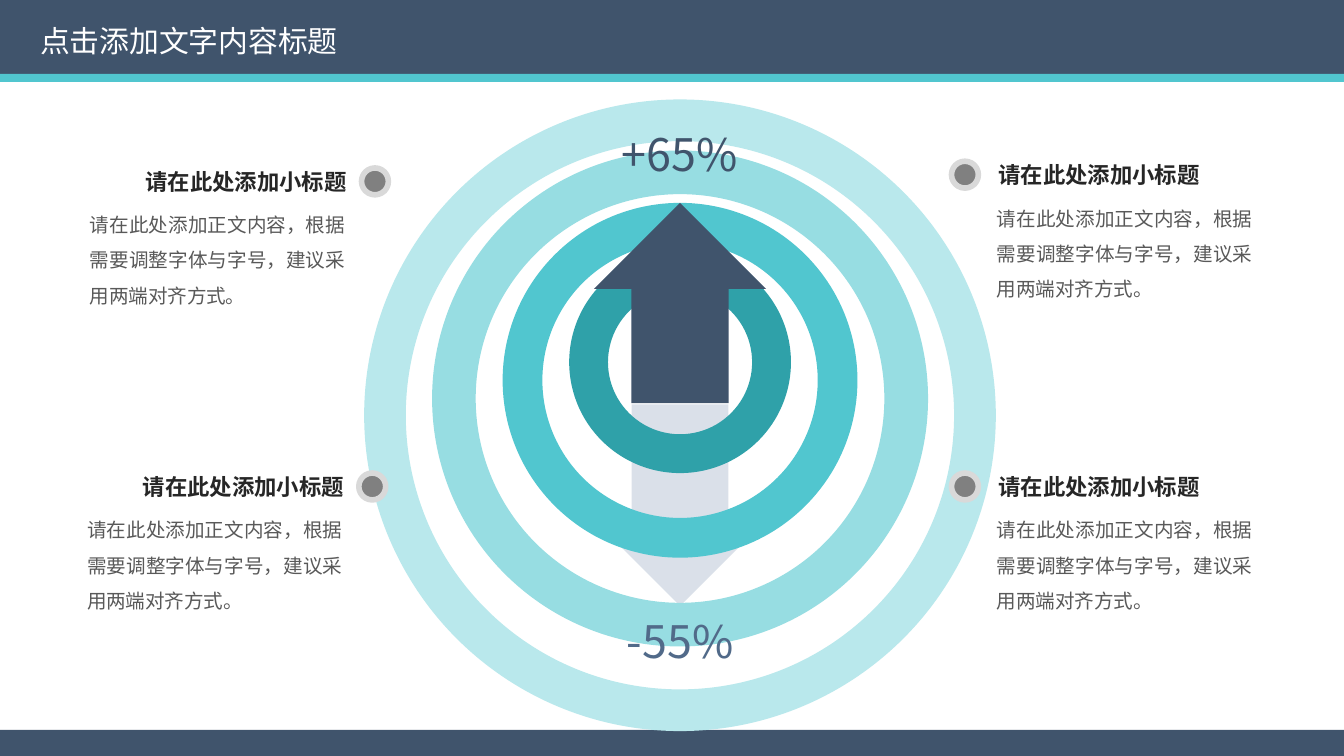
from pptx import Presentation
from pptx.dml.color import RGBColor as RGB
from pptx.enum.shapes import MSO_SHAPE as Kind
from pptx.enum.text import MSO_AUTO_SIZE as Auto, PP_ALIGN as Align
from pptx.oxml.ns import qn
from pptx.util import Inches, Pt
from lxml import etree

NAVY = RGB(0x40, 0x54, 0x6C)
SLATE = RGB(0x51, 0x6A, 0x89)
MIST = RGB(0xB6, 0xC3, 0xD4)
TEAL = RGB(0x51, 0xC6, 0xCF)
DEEP = RGB(0x2F, 0xA1, 0xA9)
SOFT = RGB(0x97, 0xDD, 0xE2)
PALE = RGB(0xB9, 0xE8, 0xEC)
GRAY = RGB(0x80, 0x80, 0x80)
RIM = RGB(0xD9, 0xD9, 0xD9)
INK = RGB(0x26, 0x26, 0x26)
BODY = RGB(0x59, 0x59, 0x59)
WHITE = RGB(0xFF, 0xFF, 0xFF)
FACE = "Noto Sans CJK SC"

HEAD = "请在此处添加小标题"
NOTE = "请在此处添加正文内容，根据需要调整字体与字号，建议采用两端对齐方式。"

deck = Presentation()
deck.slide_width, deck.slide_height = Inches(10), Inches(10 * 9 / 16)
slide = deck.slides.add_slide(deck.slide_layouts[6])


def draw(kind, box, fill, adjust=()):
    """Add a flat shape without outline; box is left, top, width, height."""
    shape = slide.shapes.add_shape(kind, *map(Inches, box))
    shape.shadow.inherit = False
    shape.fill.solid()
    shape.fill.fore_color.rgb = fill
    shape.line.fill.background()
    for i, value in enumerate(adjust):
        shape.adjustments[i] = value
    return shape


def write(text, box, size, color, align=Align.LEFT, wrap=True, bold=False, space=1.0):
    frame = slide.shapes.add_textbox(*map(Inches, box)).text_frame
    frame.word_wrap = wrap
    frame.auto_size = Auto.SHAPE_TO_FIT_TEXT
    para = frame.paragraphs[0]
    para.alignment, para.line_spacing = align, space
    run = para.add_run()
    run.text = text
    look = {"name": FACE, "size": Pt(size), "bold": bold}
    for key, value in look.items():
        setattr(run.font, key, value)
    run.font.color.rgb = color
    etree.SubElement(run.font._element, qn("a:ea")).set("typeface", FACE)


# Header and footer bands
for top, high, fill in ((0, 0.55, NAVY), (0.55, 0.06, TEAL), (5.43, 0.21, NAVY)):
    draw(Kind.RECTANGLE, (0, top, 10, high), fill)

# Half-clear down arrow, behind the rings
down = draw(Kind.UP_ARROW, (4.42, 3.01, 1.28, 1.5), MIST, (0.563, 0.5))
down._element.spPr.find(qn("a:xfrm")).set("flipV", "1")
tint = down._element.spPr.find(qn("a:solidFill"))[0]
etree.SubElement(tint, qn("a:alpha")).set("val", "50000")

# Rings share one vertical axis
AXIS = 5.06
rings = (
    (0.74, 4.7, 0.066, PALE),
    (1.12, 3.69, 0.088, SOFT),
    (1.51, 2.64, 0.112, TEAL),
    (1.87, 1.65, 0.175, DEEP),
)
for top, size, band, fill in rings:
    draw(Kind.DONUT, (AXIS - size / 2, top, size, size), fill, (band,))

write("+65%", (4.48, 0.89, 1.15, 0.5), 24, NAVY, Align.CENTER, wrap=False)
write("-55%", (4.54, 4.52, 1.04, 0.5), 24, SLATE, Align.CENTER, wrap=False)

# Captions: dot left, dot top, text left, heading alignment
notes = (
    (7.08, 1.2, 7.32, Align.LEFT),
    (7.08, 3.52, 7.32, Align.LEFT),
    (2.69, 1.25, 0.57, Align.RIGHT),
    (2.67, 3.52, 0.55, Align.RIGHT),
)
for left, top, text, side in notes:
    dot = draw(Kind.OVAL, (left, top, 0.2, 0.2), GRAY)
    dot.line.color.rgb = RIM
    dot.line.width = Pt(3)
    write(HEAD, (text + 0.01, top - 0.05, 2.1, 0.3), 12, INK, side, bold=True)
    write(NOTE, (text, top + 0.2, 2.1, 0.9), 10.5, BODY, Align.JUSTIFY, space=1.5)

draw(Kind.UP_ARROW, (4.42, 1.51, 1.28, 1.49), NAVY, (0.565, 0.5))
write("点击添加文字内容标题", (0.2, 0.12, 2.45, 0.37), 16, WHITE, wrap=False)

deck.save("out.pptx")
